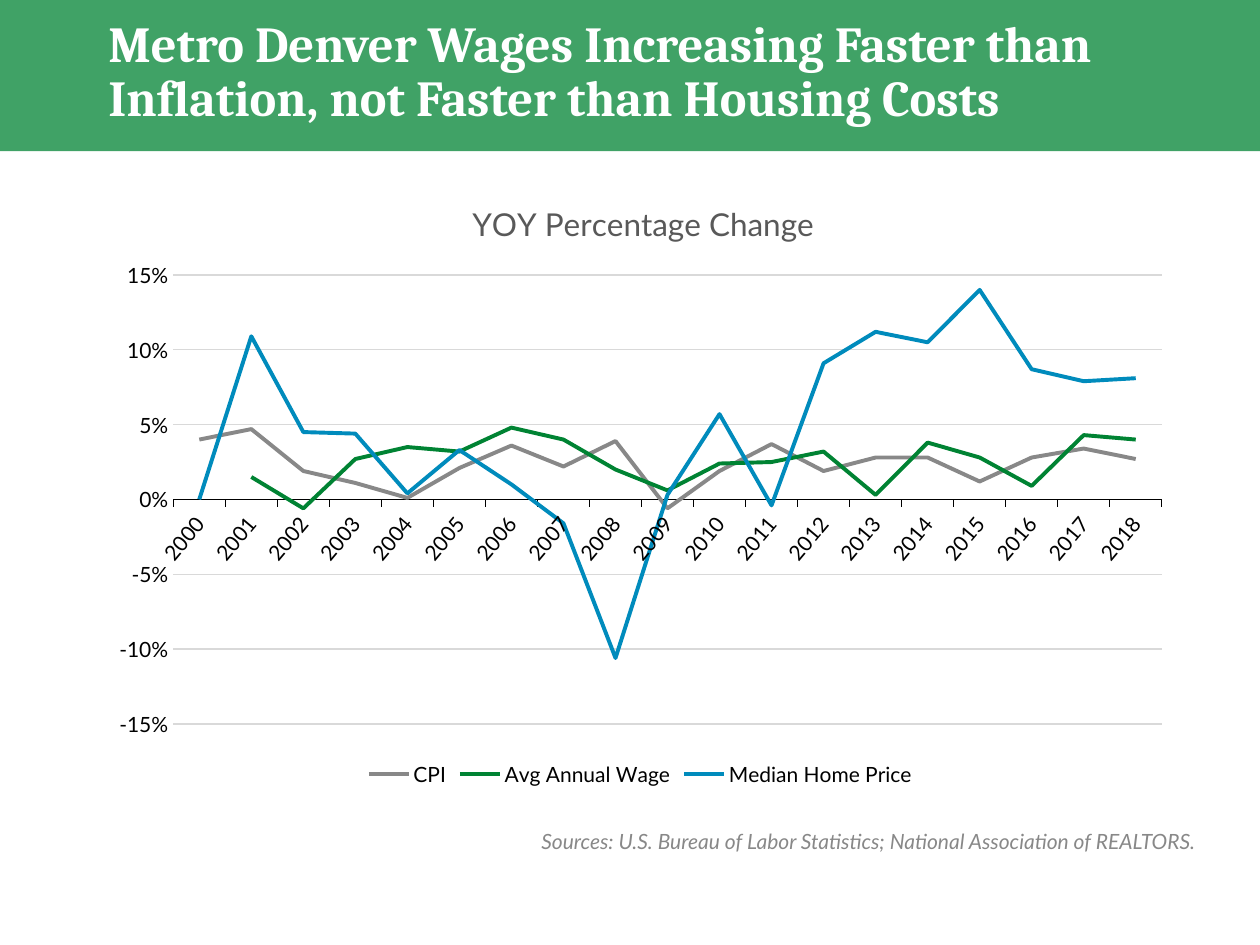
from lxml import etree
from pptx import Presentation
from pptx.chart.data import CategoryChartData
from pptx.dml.color import RGBColor
from pptx.enum.chart import XL_CHART_TYPE, XL_LEGEND_POSITION, XL_TICK_MARK
from pptx.enum.shapes import MSO_SHAPE
from pptx.enum.text import MSO_ANCHOR, MSO_AUTO_SIZE, PP_ALIGN
from pptx.oxml import parse_xml
from pptx.oxml.ns import nsdecls, qn
from pptx.util import Cm, Pt

LINE = XL_CHART_TYPE.LINE
BOTTOM = XL_LEGEND_POSITION.BOTTOM
NO_TICK, OUT_TICK = XL_TICK_MARK.NONE, XL_TICK_MARK.OUTSIDE
RECT = MSO_SHAPE.RECTANGLE
MIDDLE, NO_FIT = MSO_ANCHOR.MIDDLE, MSO_AUTO_SIZE.NONE
LEFT, RIGHT = PP_ALIGN.LEFT, PP_ALIGN.RIGHT

GREEN, GRAY, BLUE = "008333", "888888", "008BBC"
BLACK, WHITE, GRID, TITLE_GRAY = "000000", "FFFFFF", "D9D9D9", "595959"
BODY_FONT, HEAD_FONT = "Lato", "Cambria"

YEARS = [str(y) for y in range(2000, 2019)]
SERIES = [
    ("CPI", GRAY, [0.04, 0.047, 0.019, 0.011, 0.001, 0.021, 0.036, 0.022, 0.039, -0.006,
                   0.019, 0.037, 0.019, 0.028, 0.028, 0.012, 0.028, 0.034, 0.027]),
    ("Avg Annual Wage", GREEN, [None, 0.015, -0.006, 0.027, 0.035, 0.032, 0.048, 0.04, 0.02, 0.006,
                                0.024, 0.025, 0.032, 0.003, 0.038, 0.028, 0.009, 0.043, 0.04]),
    ("Median Home Price", BLUE, [0, 0.109, 0.045, 0.044, 0.004, 0.033, 0.01, -0.016, -0.106, 0.003,
                                 0.057, -0.004, 0.091, 0.112, 0.105, 0.14, 0.087, 0.079, 0.081]),
]


def rgb(value):
    return RGBColor.from_string(value)


def style_font(font, size, color, name=BODY_FONT, bold=False, italic=False):
    font.name, font.size = name, Pt(size)
    font.bold, font.italic = bold, italic
    font.color.rgb = rgb(color)


def style_line(line, color, width):
    line.color.rgb = rgb(color)
    line.width = Pt(width)


def add_header(s, x, y, w, h):
    band = s.shapes.add_shape(RECT, x, y, w, h)
    band.shadow.inherit = False
    band.fill.solid()
    band.fill.fore_color.rgb = rgb(GREEN)
    fill_color = band.fill._xPr.find(".//" + qn("a:srgbClr"))
    etree.SubElement(fill_color, qn("a:alpha"), val="75000")
    band.line.fill.background()

    title = s.shapes.title
    title._element.addprevious(band._element)
    title.left, title.top = x + Cm(1.93), y + Cm(0.03)
    title.width, title.height = w - Cm(3.45), h - Cm(0.15)
    tf = title.text_frame
    tf.word_wrap, tf.auto_size, tf.vertical_anchor = True, NO_FIT, MIDDLE
    p = tf.paragraphs[0]
    p.alignment, p.line_spacing = LEFT, 0.9
    r = p.add_run()
    r.text = "Metro Denver Wages Increasing Faster than Inflation, not Faster than Housing Costs"
    style_font(r.font, 28.8, WHITE, HEAD_FONT, bold=True)


def set_layout(element, index, target="", **box):
    for old in element.findall(qn("c:layout")):
        element.remove(old)
    sizes = "".join(f'<c:{key} val="{value}"/>' for key, value in box.items())
    element.insert(index, parse_xml(
        f'<c:layout {nsdecls("c")}><c:manualLayout>{target}'
        f'<c:xMode val="edge"/><c:yMode val="edge"/>{sizes}'
        '</c:manualLayout></c:layout>'))


def add_change_chart(s, x, y, w, h):
    data = CategoryChartData(number_format="0.0%")
    data.categories = YEARS
    for name, _, values in SERIES:
        data.add_series(name, values)
    chart = s.shapes.add_chart(LINE, x, y, w, h, data).chart
    style_font(chart.font, 10, BLACK)

    chart.has_title = True
    title = chart.chart_title
    r = title.text_frame.paragraphs[0].add_run()
    r.text = "YOY Percentage Change"
    style_font(r.font, 18, TITLE_GRAY)
    title.include_in_layout = False
    set_layout(title._element, 1, x=0.34, y=0.03)

    chart.has_legend = True
    chart.legend.position = BOTTOM
    chart.legend.include_in_layout = False
    style_font(chart.legend.font, 12, BLACK)

    cat, val = chart.category_axis, chart.value_axis
    for axis, tick in ((cat, OUT_TICK), (val, NO_TICK)):
        axis.major_tick_mark, axis.minor_tick_mark = tick, NO_TICK
        style_font(axis.tick_labels.font, 12, BLACK)
    cat._element.find(qn("c:txPr")).find(qn("a:bodyPr")).set("rot", str(-50 * 60000))
    style_line(cat.format.line, BLACK, 0.75)
    val.format.line.fill.background()
    val.minimum_scale, val.maximum_scale, val.major_unit = -0.15, 0.15, 0.05
    val.tick_labels.number_format = "0%"
    val.tick_labels.number_format_is_linked = False
    style_line(val.major_gridlines.format.line, GRID, 0.75)

    plot = chart.plots[0]
    plot.vary_by_categories = False
    for series, (_, color, _) in zip(plot.series, SERIES):
        series.smooth = False
        style_line(series.format.line, color, 2.25)
    set_layout(chart._chartSpace.chart.plotArea, 0, '<c:layoutTarget val="inner"/>',
               x=0.07, y=0.16, w=0.91, h=0.73)


def add_source(s, x, y, w, h):
    tf = s.shapes.add_textbox(x, y, w, h).text_frame
    tf.word_wrap = True
    p = tf.paragraphs[0]
    p.alignment = RIGHT
    r = p.add_run()
    r.text = "Sources: U.S. Bureau of Labor Statistics; National Association of REALTORS."
    style_font(r.font, 12, GRAY, italic=True)


def main():
    prs = Presentation()
    prs.slide_width, prs.slide_height = Cm(25.4), Cm(19.05)
    s = prs.slides.add_slide(prs.slide_layouts[5])
    add_header(s, 0, 0, prs.slide_width, Cm(3.05))
    add_change_chart(s, Cm(1.96), Cm(3.56), Cm(21.9), Cm(12.4))
    add_source(s, Cm(8.86), Cm(16.57), Cm(15.5), Cm(0.76))
    prs.save("out.pptx")


if __name__ == "__main__":
    main()
